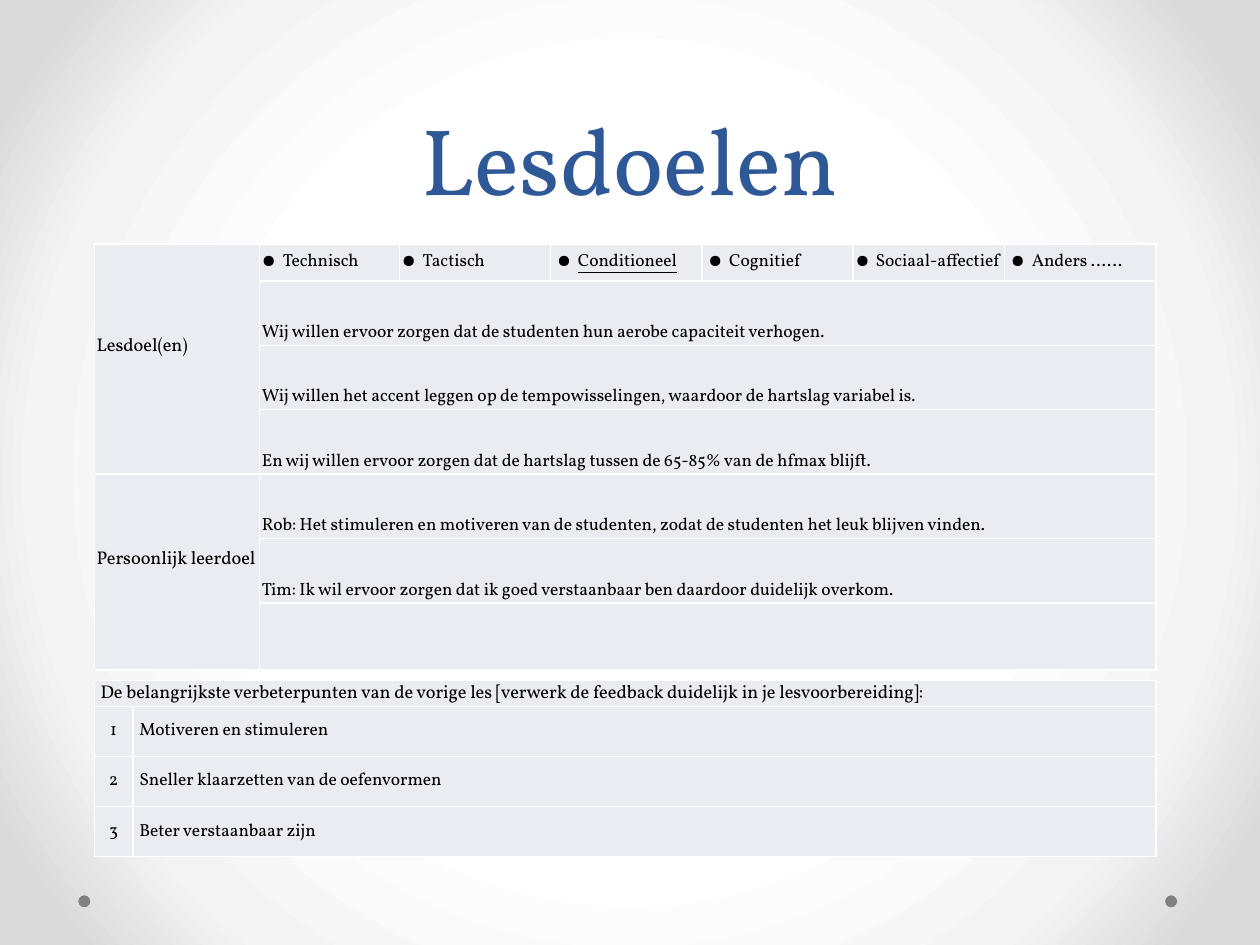
from pptx import Presentation
from pptx.dml.color import RGBColor
from pptx.enum.shapes import MSO_SHAPE as SHAPE
from pptx.enum.text import MSO_ANCHOR as ANCHOR, PP_ALIGN as ALIGN
from pptx.oxml import parse_xml
from pptx.oxml.ns import nsdecls
from pptx.util import Cm, Pt

COLORS = {"title": "2F5897", "text": "000000", "cell": "EAECF2",
          "border": "FFFFFF", "dot": "808080"}
GRADIENT = {50: "FFFFFF", 76: "F4F4F4", 92: "DADADA"}
FONT = "Vollkorn"

# Bulleted goal types: text, text indent and bullet offset in cm, underlined
GOAL_TYPES = [
    ("Technisch", 0.42, 0, False),
    ("Tactisch", 0.42, 0, False),
    ("Conditioneel", 0.5, 0.08, True),
    ("Cognitief", 0.5, 0.08, False),
    ("Sociaal-affectief", 0.4, 0, False),
    ("Anders ……", 0.5, 0.08, False),
]
GOALS = [
    "Wij willen ervoor zorgen dat de studenten hun aerobe capaciteit verhogen.",
    "Wij willen het accent leggen op de tempowisselingen, "
    "waardoor de hartslag variabel is.",
    "En wij willen ervoor zorgen dat de hartslag tussen de 65-85% "
    "van de hfmax blijft.",
    "Rob: Het stimuleren en motiveren van de studenten, "
    "zodat de studenten het leuk blijven vinden.",
    "Tim: Ik wil ervoor zorgen dat ik goed verstaanbaar ben "
    "daardoor duidelijk overkom.",
]
IMPROVE_HEAD = ("De belangrijkste verbeterpunten van de vorige les "
                "[verwerk de feedback duidelijk in je lesvoorbereiding]:")
IMPROVEMENTS = ["Motiveren en stimuleren",
                "Sneller klaarzetten van de oefenvormen",
                "Beter verstaanbaar zijn"]


def rgb(name):
    return RGBColor.from_string(COLORS[name])


def set_attrs(obj, values):
    for name, value in values.items():
        setattr(obj, name, value)


def write(tf, text, size, color="text", underline=None, **para):
    """Put one formatted run in the first paragraph and return the paragraph."""
    p = tf.paragraphs[0]
    set_attrs(p, para)
    r = p.add_run()
    r.text = text
    set_attrs(r.font, {"name": FONT, "size": Pt(size), "underline": underline})
    r.font.color.rgb = rgb(color)
    return p


def add_bullet(p, indent, offset):
    pPr = p._p.get_or_add_pPr()
    pPr.set("marL", str(Cm(indent)))
    pPr.set("indent", str(Cm(offset) - Cm(indent)))
    pPr.append(parse_xml(f'<a:buChar {nsdecls("a")} char="●"/>'))


def add_background(slide):
    stops = "".join(f'<a:gs pos="{pos * 1000}"><a:srgbClr val="{color}"/></a:gs>'
                    for pos, color in GRADIENT.items())
    slide._element.cSld.insert(0, parse_xml(
        f'<p:bg {nsdecls("p", "a")}><p:bgPr><a:gradFill rotWithShape="1">'
        f'<a:gsLst>{stops}</a:gsLst><a:path path="circle">'
        '<a:fillToRect l="50000" t="50000" r="50000" b="50000"/></a:path>'
        '</a:gradFill><a:effectLst/></p:bgPr></p:bg>'))


def add_dots(slide, left, top, width, size):
    """A small dot at each end of the given strip."""
    for x in (left + width - size, left):
        dot = slide.shapes.add_shape(SHAPE.OVAL, Cm(x), Cm(top), Cm(size), Cm(size))
        dot.shadow.inherit = False
        dot.fill.solid()
        dot.fill.fore_color.rgb = rgb("dot")
        dot.line.fill.background()


def add_title(slide, left, top, width, height):
    box = slide.shapes.add_textbox(Cm(left), Cm(top), Cm(width), Cm(height))
    tf = box.text_frame
    set_attrs(tf, {"word_wrap": True, "vertical_anchor": ANCHOR.BOTTOM})
    write(tf, "Lesdoelen", 54, "title", alignment=ALIGN.CENTER, line_spacing=Pt(58))


def add_grid(slide, left, top, cols, rows, inset):
    """An empty table with plain fill, thin borders and tight margins."""
    table = slide.shapes.add_table(len(rows), len(cols), Cm(left), Cm(top),
                                   Cm(sum(cols)), Cm(sum(rows))).table
    set_attrs(table, {"first_row": False, "horz_banding": False})
    for col, width in zip(table.columns, cols):
        col.width = Cm(width)
    for row, height in zip(table.rows, rows):
        row.height = Cm(height)
    for cell in table.iter_cells():
        set_attrs(cell, {"margin_left": Cm(inset), "margin_right": Cm(inset),
                         "margin_top": 0, "margin_bottom": 0,
                         "vertical_anchor": ANCHOR.MIDDLE})
        tcPr = cell._tc.get_or_add_tcPr()
        for side in "LRTB":
            tcPr.append(parse_xml(
                f'<a:ln{side} {nsdecls("a")} w="{Pt(1)}"><a:solidFill>'
                f'<a:srgbClr val="{COLORS["border"]}"/></a:solidFill></a:ln{side}>'))
        cell.fill.solid()
        cell.fill.fore_color.rgb = rgb("cell")
    return table


def add_goals(slide, left, top):
    cols = [3.33, 2.82] + [3.05] * 5
    rows = [0.74] + [1.3] * 5 + [1.35]
    table = add_grid(slide, left, top, cols, rows, 0.05)
    # Row labels, raised a little above the middle
    for first, last, label in ((0, 3, "Lesdoel(en)"), (4, 6, "Persoonlijk leerdoel")):
        cell = table.cell(first, 0)
        cell.merge(table.cell(last, 0))
        cell.margin_bottom = Cm(0.5)
        write(cell.text_frame, label, 10.5)
    # Goal types
    for c, (text, indent, offset, underline) in enumerate(GOAL_TYPES, 1):
        p = write(table.cell(0, c).text_frame, text, 10, underline=underline)
        add_bullet(p, indent, offset)
    # Goals across the full width; the last row stays open
    for r in range(1, len(rows)):
        table.cell(r, 1).merge(table.cell(r, len(cols) - 1))
    for r, text in enumerate(GOALS, 1):
        cell = table.cell(r, 1)
        cell.vertical_anchor = ANCHOR.BOTTOM
        write(cell.text_frame, text, 10, space_after=Pt(3))


def add_improvements(slide, left, top):
    table = add_grid(slide, left, top, [0.78, 20.62], [0.52] + [1.01] * 3, 0.13)
    head = table.cell(0, 0)
    head.merge(table.cell(0, 1))
    write(head.text_frame, IMPROVE_HEAD, 10.5)
    for number, text in enumerate(IMPROVEMENTS, 1):
        write(table.cell(number, 0).text_frame, str(number), 10,
              alignment=ALIGN.CENTER)
        write(table.cell(number, 1).text_frame, text, 10)


def main():
    prs = Presentation()
    prs.slide_width, prs.slide_height = Cm(25.4), Cm(19.05)
    slide = prs.slides.add_slide(prs.slide_layouts[6])
    add_background(slide)
    add_dots(slide, 1.58, 18.05, 22.15, 0.24)
    add_title(slide, 1.27, 0, 22.86, 4.45)
    add_goals(slide, 1.9, 4.92)
    add_improvements(slide, 1.9, 13.72)
    prs.save("out.pptx")


if __name__ == "__main__":
    main()
